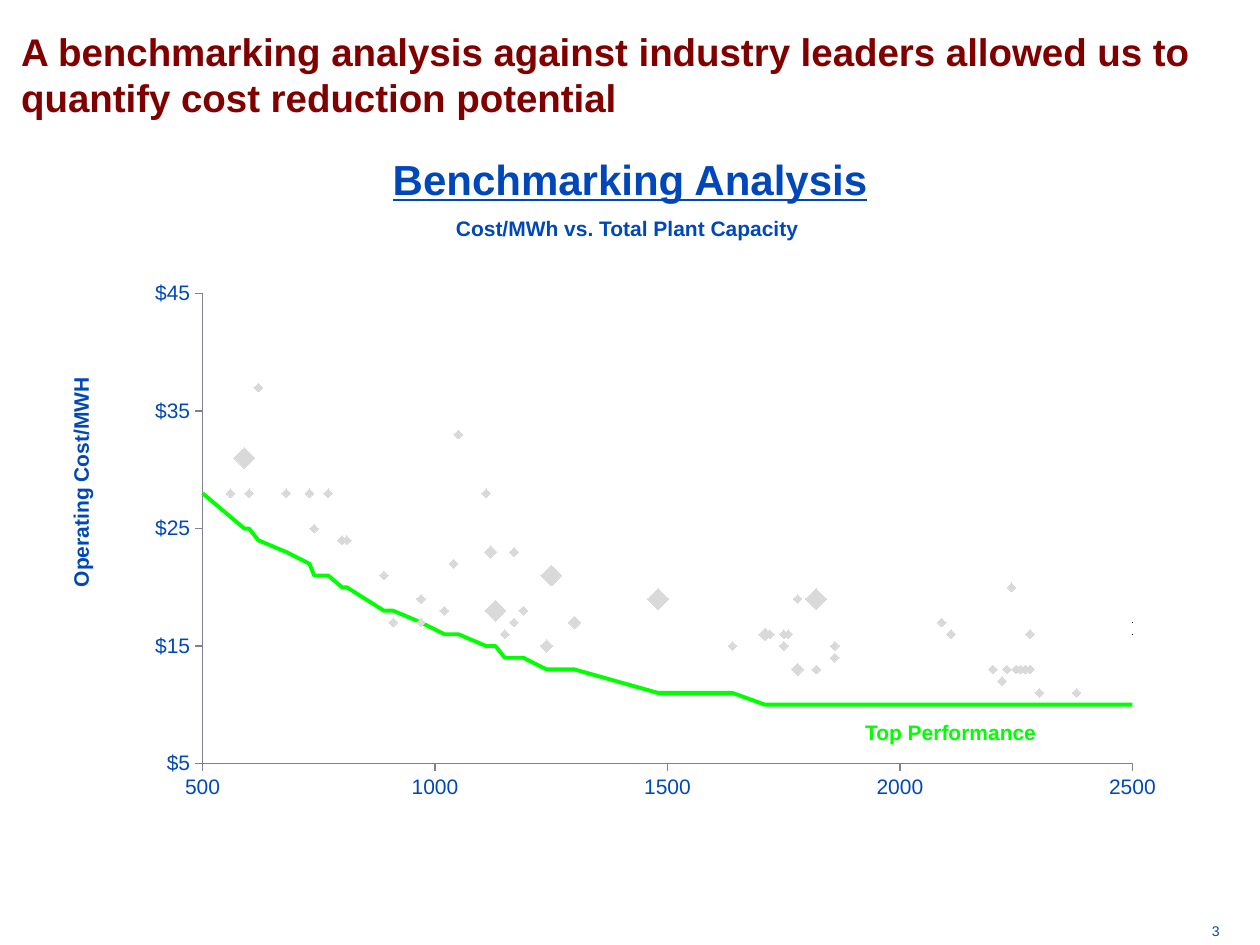
from lxml.etree import SubElement
from pptx import Presentation
from pptx.chart.data import XyChartData
from pptx.dml.color import RGBColor
from pptx.enum.chart import XL_AXIS_CROSSES as Crosses
from pptx.enum.chart import XL_CHART_TYPE as ChartType
from pptx.enum.chart import XL_MARKER_STYLE as Marker
from pptx.enum.chart import XL_TICK_MARK as Tick
from pptx.enum.text import MSO_ANCHOR as Anchor
from pptx.enum.text import PP_ALIGN as Align
from pptx.oxml.ns import qn
from pptx.util import Inches, Pt

BLUE = RGBColor(0x00, 0x48, 0xB9)
MAROON = RGBColor(0x80, 0x00, 0x00)
GREEN = RGBColor(0x00, 0xFF, 0x00)
LIGHT_GRAY = RGBColor(0xD9, 0xD9, 0xD9)
AXIS_GRAY = RGBColor(0x80, 0x80, 0x90)
FONT = "Arial"

HEADLINE = ("A benchmarking analysis against industry leaders allowed us to "
            "quantify cost reduction potential")
PLANTS = [
    (500, None, 28),
    (560, 28, 26), (590, 31, 25), (600, 28, 25), (620, 37, 24), (680, 28, 23),
    (730, 28, 22), (740, 25, 21), (770, 28, 21), (800, 24, 20), (810, 24, 20),
    (890, 21, 18), (910, 17, 18), (970, 17, 17), (970, 19, 17), (1020, 18, 16),
    (1040, 22, 16), (1050, 33, 16), (1110, 28, 15), (1120, 23, 15), (1130, 18, 15),
    (1150, 16, 14), (1170, 23, 14), (1170, 17, 14), (1190, 18, 14), (1240, 15, 13),
    (1250, 21, 13), (1300, 17, 13), (1480, 19, 11), (1640, 15, 11), (1710, 16, 10),
    (1720, 16, 10), (1750, 15, 10), (1750, 16, 10), (1760, 16, 10), (1780, 19, 10),
    (1780, 13, 10), (1820, 19, 10), (1820, 13, 10), (1860, 14, 10), (1860, 15, 10),
    (2090, 17, 10), (2110, 16, 10), (2200, 13, 10), (2200, 13, 10), (2220, 12, 10),
    (2230, 13, 10), (2240, 20, 10), (2250, 13, 10), (2260, 13, 10), (2270, 13, 10),
    (2280, 16, 10), (2280, 13, 10), (2300, 11, 10), (2380, 11, 10),
    (2500, 17, 10), (2500, 16, 10),
]
COSTS = [(capacity, cost) for capacity, cost, best in PLANTS]
FRONTIER = [(capacity, best) for capacity, cost, best in PLANTS]
MARKER_SIZES = {
    12: [(590, 31), (1130, 18), (1250, 21), (1480, 19), (1820, 19)],
    7: [(1120, 23), (1240, 15), (1300, 17), (1710, 16), (1780, 13)],
}
UNMARKED = [(2500, 17), (2500, 16)]


def style(font, size, color, bold=False):
    font.name, font.size, font.bold = FONT, Pt(size), bold
    font.color.rgb = color


def place(shape, left, top, width, height):
    shape.left, shape.top = Inches(left), Inches(top)
    shape.width, shape.height = Inches(width), Inches(height)


def write(shape, text, size, color, bold=True, align=Align.LEFT, anchor=Anchor.TOP, wrap=True):
    frame = shape.text_frame
    frame.word_wrap, frame.vertical_anchor = wrap, anchor
    para = frame.paragraphs[0]
    para.alignment = align
    span = para.add_run()
    span.text = text
    style(span.font, size, color, bold)
    return span


def set_layout(parent, position, **settings):
    layout = parent.find(qn("c:layout"))
    if layout is None:
        layout = SubElement(parent, qn("c:layout"))
        before = parent.find(qn("c:tx"))
        parent.insert(0 if before is None else parent.index(before) + 1, layout)
    manual = SubElement(layout, qn("c:manualLayout"))
    values = {**settings, "xMode": "edge", "yMode": "edge", **position}
    for tag, value in values.items():
        SubElement(manual, qn(f"c:{tag}")).set("val", str(value))


def format_axis(axis, low, high, step, number_format):
    axis.minimum_scale, axis.maximum_scale, axis.major_unit = low, high, step
    axis.has_major_gridlines = False
    axis.major_tick_mark, axis.minor_tick_mark = Tick.OUTSIDE, Tick.NONE
    axis.crosses = Crosses.MINIMUM
    axis.tick_labels.number_format = number_format
    axis.tick_labels.number_format_is_linked = False
    style(axis.tick_labels.font, 12, BLUE)
    axis.format.line.color.rgb = AXIS_GRAY
    axis.format.line.width = Pt(0.75)


def fill_marker(marker, size):
    marker.style, marker.size = Marker.DIAMOND, size
    marker.format.fill.solid()
    marker.format.fill.fore_color.rgb = LIGHT_GRAY
    marker.format.line.color.rgb = LIGHT_GRAY


def drop_missing_values(series):
    for point in list(series._element.iter(qn("c:pt"))):
        if point.findtext(qn("c:v")) in ("None", "", None):
            point.getparent().remove(point)


def add_benchmark_chart(page):
    data = XyChartData()
    for name, points in (("Series 1", COSTS), ("Series 2", FRONTIER)):
        series = data.add_series(name)
        for x, y in points:
            series.add_data_point(x, y)
    chart = page.shapes.add_chart(ChartType.XY_SCATTER, Inches(0.42), Inches(2.06),
                                  Inches(9), Inches(4.52), data).chart
    chart.has_legend = chart.has_title = False
    style(chart.font, 18, BLUE)
    chart.plots[0].vary_by_categories = False

    format_axis(chart.category_axis, 500, 2500, 500, "General")
    format_axis(chart.value_axis, 5, 45, 10, '"$"#,##0')
    title = chart.value_axis.axis_title
    span = title.text_frame.paragraphs[0].add_run()
    span.text = "Operating Cost/MWH"
    style(span.font, 12, BLUE, True)
    set_layout(title._element, {"x": 0.01, "y": 0.2})
    plot_area = chart.plots[0]._element.getparent()
    set_layout(plot_area, {"x": 0.132, "y": 0.06, "w": 0.82, "h": 0.825},
               layoutTarget="inner")

    plants, frontier = chart.plots[0].series
    drop_missing_values(plants)
    plants.format.line.fill.background()
    fill_marker(plants.marker, 5)
    for size, points in MARKER_SIZES.items():
        for point in points:
            fill_marker(plants.points[COSTS.index(point)].marker, size)
    for point in UNMARKED:
        plants.points[COSTS.index(point)].marker.style = Marker.NONE
    frontier.marker.style = Marker.NONE
    frontier.format.line.color.rgb = GREEN
    frontier.format.line.width = Pt(2.25)


def add_text(page, bounds, *content, **options):
    box = page.shapes.add_textbox(*map(Inches, bounds))
    write(box, *content, **options)


def main():
    deck = Presentation()
    deck.slide_width, deck.slide_height = Inches(10), Inches(7.5)
    page = deck.slides.add_slide(deck.slide_layouts[5])
    add_benchmark_chart(page)

    title = page.shapes.title
    place(title, 0.5, 0.97, 9, 0.89)
    span = write(title, "Benchmarking Analysis", 24, BLUE, align=Align.CENTER,
                 anchor=Anchor.MIDDLE)
    span.font.underline = True

    add_text(page, (3.52, 1.66, 2.95, 0.3), "Cost/MWh vs. Total Plant Capacity", 12, BLUE,
             wrap=False)
    add_text(page, (9.52, 7.27, 0.48, 0.23), "3", 8, BLUE, bold=False)
    add_text(page, (6.41, 5.66, 2.27, 0.3), "Top Performance", 12, GREEN, align=Align.CENTER)
    add_text(page, (0.07, 0.27, 9.93, 0.64), HEADLINE, 22, MAROON, anchor=Anchor.MIDDLE)
    deck.save("out.pptx")


if __name__ == "__main__":
    main()
